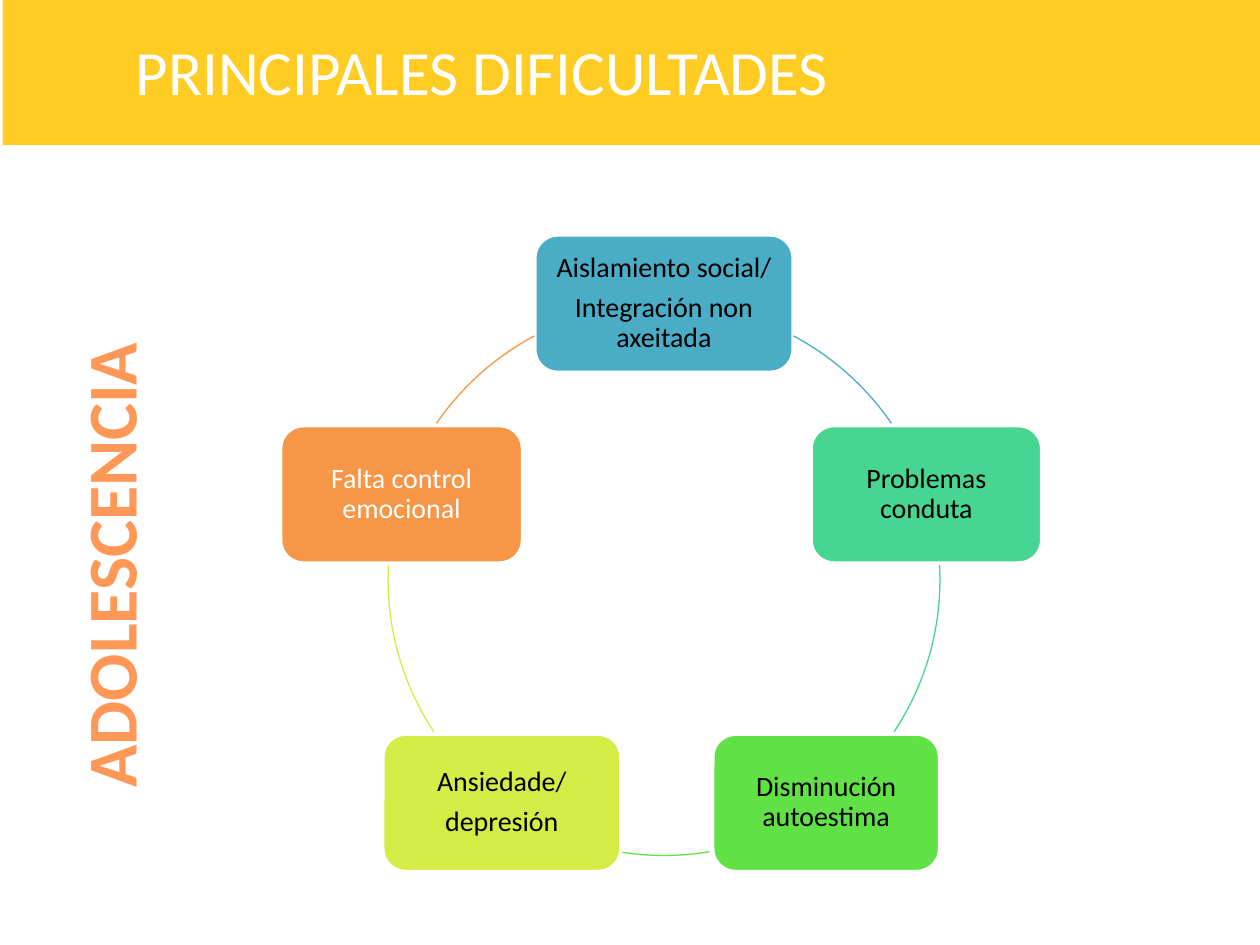
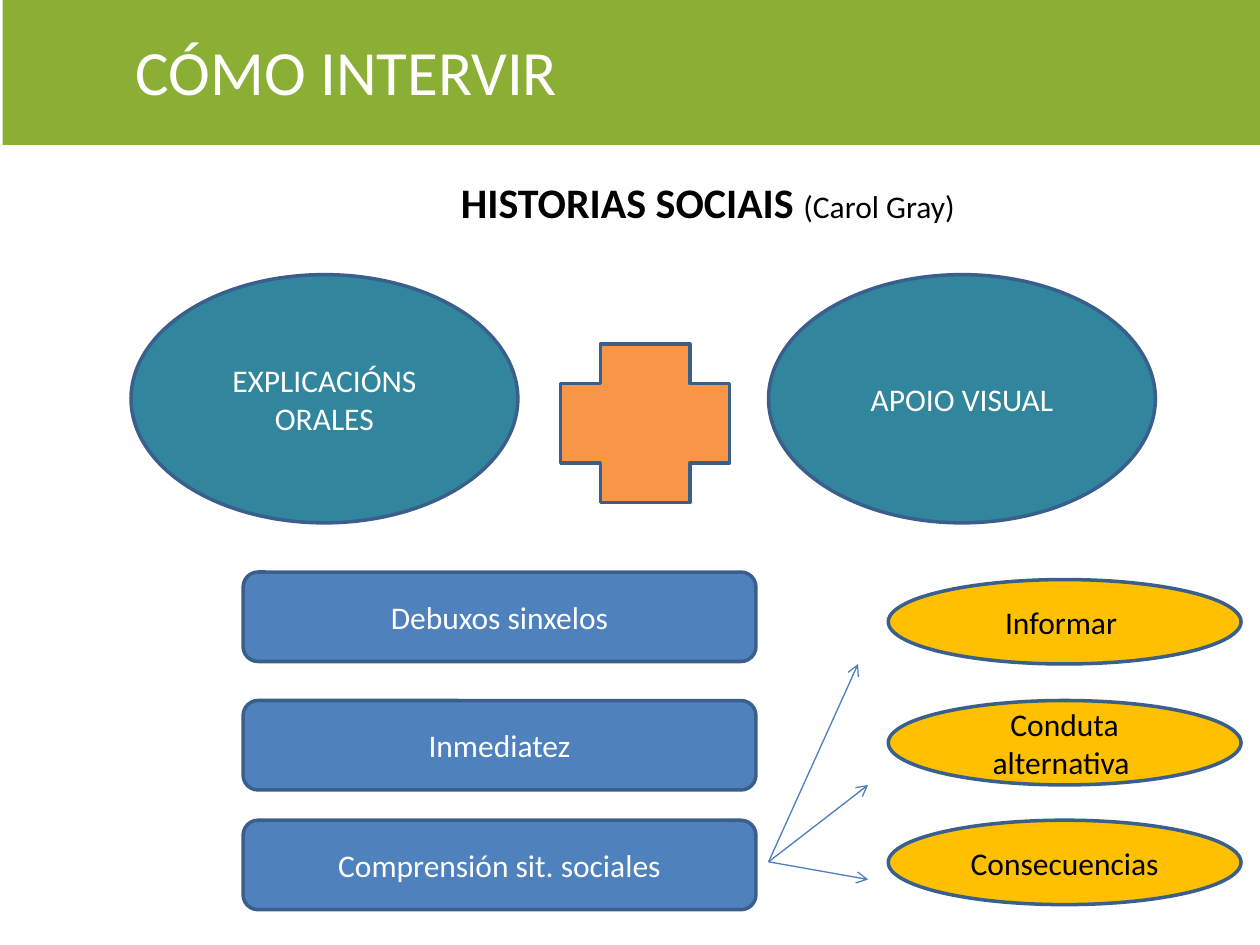
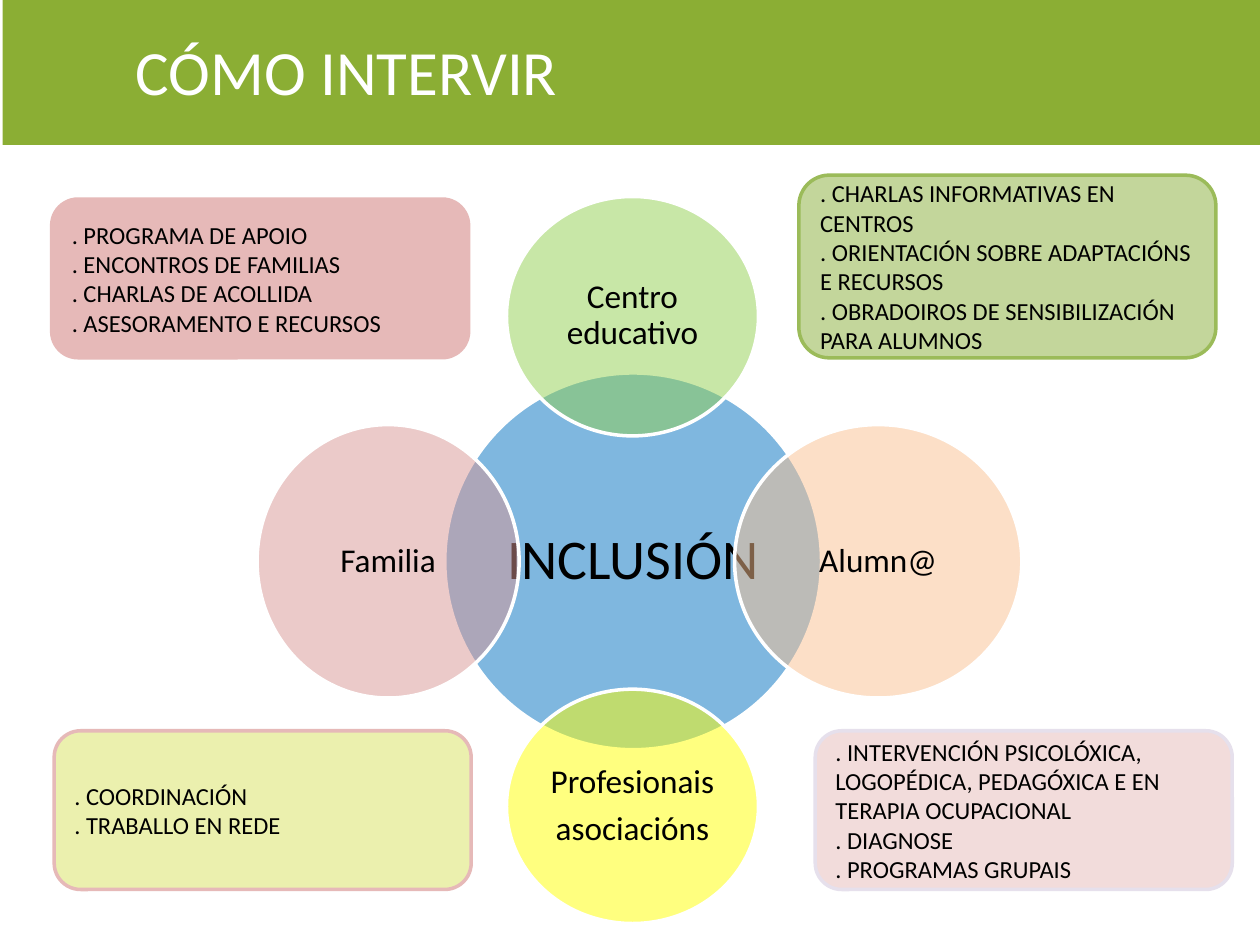
import math

import pptx
import pptx.dml.color
import pptx.enum.shapes
import pptx.enum.text
import pptx.oxml
import pptx.oxml.ns
import pptx.util
from pptx.util import Inches

SHAPE = pptx.enum.shapes.MSO_SHAPE
ALIGN = pptx.enum.text.PP_ALIGN
ANCHOR = pptx.enum.text.MSO_ANCHOR

# ---- Shared look
FONT = "Calibri"
WHITE, BLACK = "FFFFFF", "000000"
YELLOW, GREEN, ORANGE = "FFCC23", "8BAE34", "F79646"
OUTLINE = "3A5F8C"

# ---- Slide 1: cycle of difficulties, clockwise from the top
CYCLE_CENTRE, CYCLE_RADIUS = (5.27, 4.6), 2.19
NODE_HEIGHT = 1.09
# paragraphs, width, fill, text colour, start and end angle of the arc that follows
CYCLE = [
    (["Aislamiento social/", "Integración non axeitada"], 2.05, "4BACC6", BLACK, 298, 325.5),
    (["Problemas conduta"], 1.83, "48D491", BLACK, 357, 33.5),
    (["Disminución autoestima"], 1.8, "60E146", BLACK, 80.5, 99),
    (["Ansiedade/", "depresión"], 1.89, "D5EC46", BLACK, 146.5, 183),
    (["Falta control emocional"], 1.92, ORANGE, WHITE, 214.5, 242),
]

# ---- Slide 2: social stories
SUPPORTS = [("EXPLICACIÓNS ORALES", 1.04), ("APOIO VISUAL", 6.1)]
TRAITS = [("Debuxos sinxelos", 4.54), ("Inmediatez", 5.56), ("Comprensión sit. sociales", 6.51)]
PURPOSES = [("Informar ", 4.6), ("Conduta alternativa ", 5.56), ("Consecuencias", 6.51)]
ARROW_START = (6.1, 6.84)
ARROW_ENDS = [(6.81, 5.27), (6.89, 6.23), (6.89, 6.98)]

# ---- Slide 3: circles of inclusion (paragraphs, place, fill, size, inset)
CIRCLES = [
    (["INCLUSIÓN"], (3.53, 2.96, 2.99, 2.99), "0070C0", 32, 0.04),
    (["Centro educativo"], (4.02, 1.56, 2, 1.9), "92D050", 19, 0.03),
    (["Alumn@"], (5.83, 3.37, 2.28, 2.17), "FAC090", 19, 0.03),
    (["Profesionais", "asociacións"], (4.02, 5.47, 2, 1.86), "FFFF00", 19, 0.03),
    (["Familia"], (2.04, 3.37, 2.08, 2.17), "D99694", 19, 0.03),
]
CARD_WIDTH = 3.31
# left, top, height, fill, line, paragraphs
CARDS = [
    (6.34, 1.39, 1.45, "C3D69B", "9BBB59", [
        ". CHARLAS INFORMATIVAS EN CENTROS",
        ". ORIENTACIÓN SOBRE ADAPTACIÓNS E RECURSOS",
        ". OBRADOIROS DE SENSIBILIZACIÓN PARA ALUMNOS"]),
    (0.41, 1.58, 1.26, "E6B9B8", "E6B9B8", [
        ". PROGRAMA DE APOIO", ". ENCONTROS DE FAMILIAS",
        ". CHARLAS DE ACOLLIDA", ". ASESORAMENTO E RECURSOS"]),
    (6.47, 5.8, 1.26, "F2DCDB", "E6E0EC", [
        ". INTERVENCIÓN PSICOLÓXICA, LOGOPÉDICA, PEDAGÓXICA E EN TERAPIA OCUPACIONAL",
        ". DIAGNOSE", ". PROGRAMAS GRUPAIS"]),
    (0.43, 5.8, 1.26, "EBF0AE", "E6B9B8", [". COORDINACIÓN", ". TRABALLO EN REDE"]),
]


# ---- Helpers
def rgb(code):
    return pptx.dml.color.RGBColor.from_string(code)


def add_span(para, text, size, colour, bold=False):
    span = para.add_run()
    span.text = text
    span.font.name = FONT
    span.font.size = pptx.util.Pt(size)
    span.font.color.rgb = rgb(colour)
    span.font.bold = bold


def write(box, lines, size, colour, align=ALIGN.CENTER, tight=False, inset=None):
    """Fill a shape with one paragraph per line; tight is the diagram spacing."""
    frame = box.text_frame
    frame.word_wrap = True
    frame.vertical_anchor = ANCHOR.MIDDLE
    if inset is not None:
        frame.margin_left = frame.margin_right = Inches(inset)
        frame.margin_top = frame.margin_bottom = Inches(inset)
    for index, line in enumerate(lines):
        para = frame.add_paragraph() if index else frame.paragraphs[0]
        para.alignment = align
        if tight:
            para.line_spacing = 0.9
            para.space_after = pptx.util.Pt(0.35 * size)
        add_span(para, line, size, colour)


def add_box(page, kind, place, fill=None, line=None, width=2, alpha=None):
    box = page.shapes.add_shape(kind, *map(Inches, place))
    box.shadow.inherit = False
    if fill:
        box.fill.solid()
        box.fill.fore_color.rgb = rgb(fill)
    else:
        box.fill.background()
    if line:
        box.line.color.rgb = rgb(line)
        box.line.width = pptx.util.Pt(width)
    else:
        box.line.fill.background()
    if alpha:
        colour = box.element.spPr.find(pptx.oxml.ns.qn("a:solidFill"))[0]
        colour.append(new_element("alpha", f'val="{alpha * 1000}"'))
    return box


def add_label(page, place, spans, wrap=True, align=ALIGN.LEFT):
    box = page.shapes.add_textbox(*map(Inches, place))
    box.text_frame.word_wrap = wrap
    para = box.text_frame.paragraphs[0]
    para.alignment = align
    for span in spans:
        add_span(para, *span)
    return box


def new_element(tag, attributes=""):
    return pptx.oxml.parse_xml(f'<a:{tag} {pptx.oxml.ns.nsdecls("a")} {attributes}/>')


def add_arrow(page, start, end):
    ends = map(Inches, (*start, *end))
    arrow = page.shapes.add_connector(pptx.enum.shapes.MSO_CONNECTOR.STRAIGHT, *ends)
    arrow.line.color.rgb = rgb("4B7EBC")
    arrow.line.width = pptx.util.Pt(0.75)
    arrow.get_or_add_ln().append(new_element("tailEnd", 'type="arrow"'))
    arrow.element.spPr.append(new_element("effectLst"))


def add_band(page, title, fill):
    add_box(page, SHAPE.RECTANGLE, (0.02, 0, 9.98, 1.15), fill)
    add_label(page, (0.98, 0.21, 8.27, 0.71), [(title, 36, WHITE)])


# ---- Slides
def build_difficulties(page):
    centre_x, centre_y = CYCLE_CENTRE
    ring = (centre_x - CYCLE_RADIUS, centre_y - CYCLE_RADIUS, 2 * CYCLE_RADIUS, 2 * CYCLE_RADIUS)
    for index, (lines, width, fill, colour, start, end) in enumerate(CYCLE):
        angle = math.radians(360 / len(CYCLE) * index - 90)
        left = centre_x + CYCLE_RADIUS * math.cos(angle) - width / 2
        top = centre_y + CYCLE_RADIUS * math.sin(angle) - NODE_HEIGHT / 2
        node = add_box(page, SHAPE.ROUNDED_RECTANGLE, (left, top, width, NODE_HEIGHT), fill, WHITE)
        write(node, lines, 16, colour, tight=True, inset=0.07)
        arc = add_box(page, SHAPE.ARC, ring, line=fill, width=0.75)
        # one degree is 60000 units, and an adjustment of 1 is 100000
        arc.adjustments[0], arc.adjustments[1] = start * 0.6, end * 0.6
    stage = add_label(page, (-1.37, 4.1, 4.47, 0.77), [("ADOLESCENCIA", 40, "FF9856", True)],
                      wrap=False, align=ALIGN.CENTER)
    stage.rotation = 270
    add_band(page, "PRINCIPALES DIFICULTADES", YELLOW)


def build_stories(page):
    for text, left in SUPPORTS:
        support = add_box(page, SHAPE.OVAL, (left, 2.18, 3.07, 1.97), "31859C", OUTLINE)
        write(support, [text], 18, WHITE)
    add_box(page, SHAPE.CROSS, (4.45, 2.73, 1.34, 1.26), ORANGE, OUTLINE)
    for text, top in TRAITS:
        trait = add_box(page, SHAPE.ROUNDED_RECTANGLE, (1.93, top, 4.07, 0.71), "4F81BD", OUTLINE)
        write(trait, [text], 18, WHITE)
    add_band(page, "CÓMO INTERVIR", GREEN)
    for text, top in PURPOSES:
        purpose = add_box(page, SHAPE.OVAL, (7.05, top, 2.8, 0.67), "FFC000", OUTLINE)
        write(purpose, [text], 18, BLACK)
    for end in ARROW_ENDS:
        add_arrow(page, ARROW_START, end)
    add_label(page, (3.56, 1.35, 4.16, 0.5),
              [("HISTORIAS SOCIAIS ", 24, BLACK, True), ("(Carol Gray)", 18, BLACK)], wrap=False)


def build_inclusion(page):
    for lines, place, fill, size, inset in CIRCLES:
        circle = add_box(page, SHAPE.OVAL, place, fill, WHITE, alpha=50)
        write(circle, lines, size, BLACK, tight=True, inset=inset)
    add_band(page, "CÓMO INTERVIR", GREEN)
    for left, top, height, fill, line, lines in CARDS:
        card = add_box(page, SHAPE.ROUNDED_RECTANGLE, (left, top, CARD_WIDTH, height), fill, line)
        write(card, lines, 14, BLACK, align=ALIGN.LEFT)


def main():
    deck = pptx.Presentation()
    deck.slide_width, deck.slide_height = Inches(10), Inches(7.5)
    for build in (build_difficulties, build_stories, build_inclusion):
        build(deck.slides.add_slide(deck.slide_layouts[6]))
    deck.save("out.pptx")


if __name__ == "__main__":
    main()
